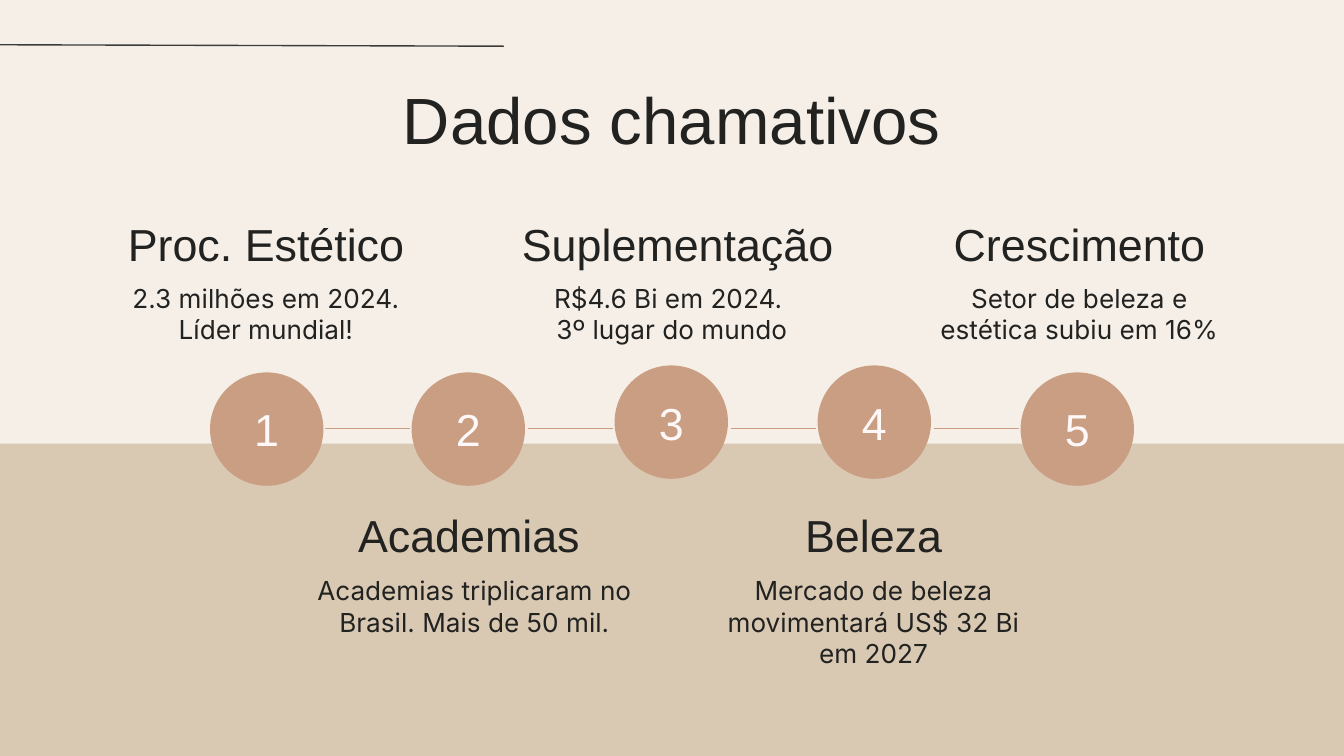
import pptx
import pptx.util
import pptx.dml.color
import pptx.enum.shapes
import pptx.enum.text
import pptx.oxml.ns
import lxml.etree

RGB = pptx.dml.color.RGBColor
ANCHOR = pptx.enum.text.MSO_ANCHOR
SHAPE = pptx.enum.shapes.MSO_SHAPE

CREAM = RGB(0xF5, 0xEF, 0xE8)
SAND = RGB(0xD9, 0xC9, 0xB3)
CLAY = RGB(0xC9, 0x9E, 0x82)
INK = RGB(0x22, 0x22, 0x21)
GREY = RGB(0x3C, 0x3C, 0x3A)
PALE = RGB(0xFF, 0xF8, 0xF8)

SCALE = 9525  # EMU per px, 96 px to the inch
WIDTH, HEIGHT = 960, 540
INSET = pptx.util.Inches(0.1)
DOT, FIRST, LAST = 81, 150, 729
HIGH, LOW = (154, 49, 192), (363, 48, 401)  # head top, head height, body top

# left, head width, body width, row, dot top, head, body
STAGES = [
    (72, 236, 236, HIGH, 266, "Proc. Estético", "2.3 milhões em 2024.\nLíder mundial!"),
    (217, 236, 244, LOW, 266, "Academias", "Academias triplicaram no Brasil. Mais de 50 mil."),
    (362, 244, 236, HIGH, 261, "Suplementação", "R$4.6 Bi em 2024. \n3º lugar do mundo"),
    (506, 236, 236, LOW, 261, "Beleza", "Mercado de beleza movimentará US$ 32 Bi em 2027"),
    (653, 236, 236, HIGH, 266, "Crescimento", "Setor de beleza e estética subiu em 16%"),
]


def px(*values):
    return [pptx.util.Emu(value * SCALE) for value in values]


def write(shape, text, size, font="Arial", color=INK, anchor=ANCHOR.TOP):
    """Fill a shape with centred text of one style."""
    frame = shape.text_frame
    frame.word_wrap = True
    frame.vertical_anchor = anchor
    frame.margin_left = frame.margin_right = INSET
    frame.margin_top = frame.margin_bottom = INSET
    frame.text = text
    for para in frame.paragraphs:
        para.alignment = pptx.enum.text.PP_ALIGN.CENTER
        for run in para.runs:
            run.font.name = font
            run.font.size = pptx.util.Pt(size)
            run.font.color.rgb = color


def add_text(slide, box, text, size, **style):
    write(slide.shapes.add_textbox(*px(*box)), text, size, **style)


def add_shape(slide, kind, box, color):
    shape = slide.shapes.add_shape(kind, *px(*box))
    shape.shadow.inherit = False
    shape.fill.solid()
    shape.fill.fore_color.rgb = color
    shape.line.fill.background()
    return shape


def add_line(slide, ends, color):
    line = slide.shapes.add_connector(
        pptx.enum.shapes.MSO_CONNECTOR.STRAIGHT, *px(*ends))
    line.line.color.rgb = color
    line.line.width = pptx.util.Pt(0.75)
    lxml.etree.SubElement(line._element.spPr, pptx.oxml.ns.qn("a:effectLst"))


def add_stage(slide, index, stage):
    left, head_w, body_w, (head_y, head_h, body_y), dot_y, head, body = stage
    add_text(slide, (left, head_y, head_w, head_h), head, 24, anchor=ANCHOR.BOTTOM)
    add_text(slide, (left, body_y, body_w, 57), body, 14, font="Inter")
    dot_x = FIRST + index * (LAST - FIRST) // (len(STAGES) - 1)
    if index:
        add_line(slide, (dot_x - 62, 306, dot_x - 1, 306), CLAY)
    dot = add_shape(slide, SHAPE.OVAL, (dot_x, dot_y, DOT, DOT), CLAY)
    write(dot, str(index + 1), 24, color=PALE, anchor=ANCHOR.MIDDLE)


def main():
    deck = pptx.Presentation()
    deck.slide_width, deck.slide_height = px(WIDTH, HEIGHT)
    slide = deck.slides.add_slide(deck.slide_layouts[6])
    slide.background.fill.solid()
    slide.background.fill.fore_color.rgb = CREAM

    add_line(slide, (360, 33, 0, 32), GREY)
    add_text(slide, (75, 47, 810, 60), "Dados chamativos", 35)
    add_shape(slide, SHAPE.RECTANGLE, (0, 317, WIDTH, HEIGHT - 317), SAND)
    for index, stage in enumerate(STAGES):
        add_stage(slide, index, stage)
    deck.save("out.pptx")


if __name__ == "__main__":
    main()
